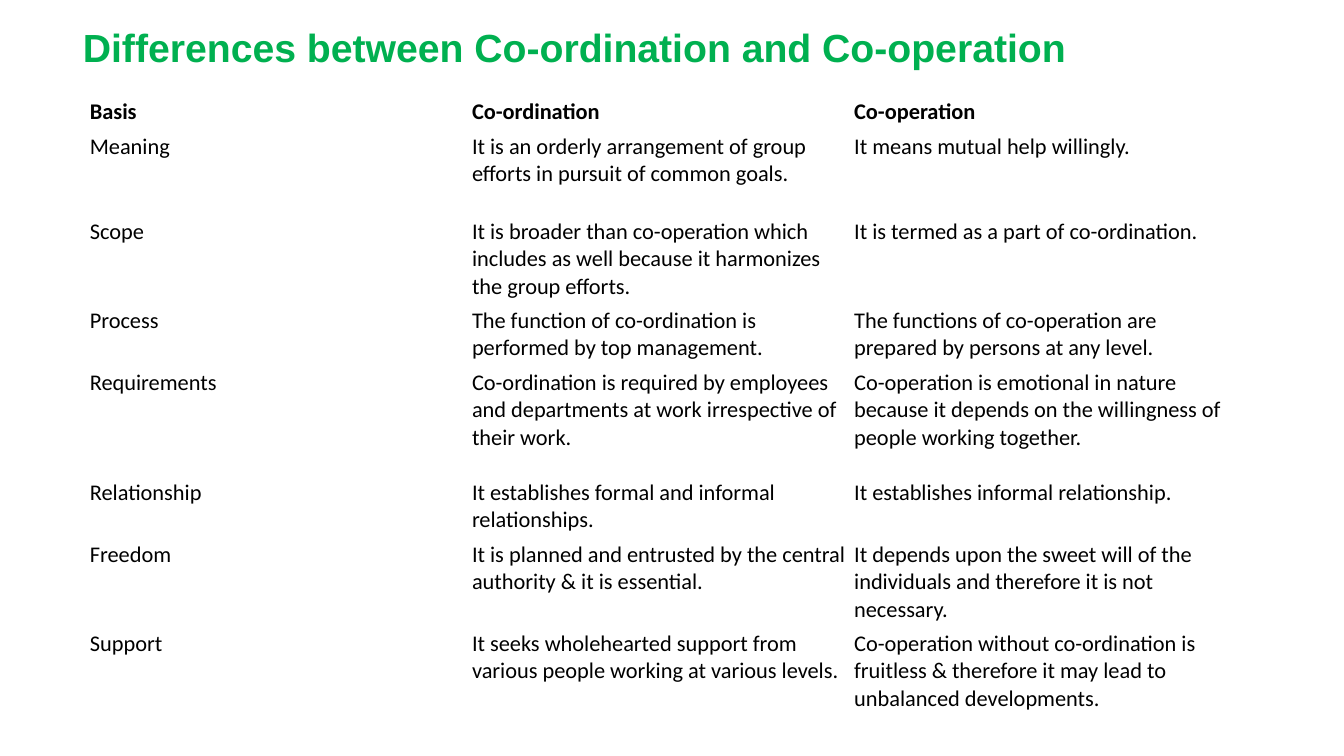
import pptx
import pptx.dml.color
import pptx.enum.text
import pptx.util

Pt = pptx.util.Pt

COMPARISON = [
    ("Basis", "Co-ordination", "Co-operation"),
    ("Meaning",
     "It is an orderly arrangement of group efforts in pursuit of common goals.",
     "It means mutual help willingly."),
    ("Scope",
     "It is broader than co-operation which includes as well because it harmonizes the group efforts.",
     "It is termed as a part of co-ordination."),
    ("Process",
     "The function of co-ordination is performed by top management.",
     "The functions of co-operation are prepared by persons at any level."),
    ("Requirements",
     "Co-ordination is required by employees and departments at work irrespective of their work.",
     "Co-operation is emotional in nature because it depends on the willingness of people working together."),
    ("Relationship",
     "It establishes formal and informal relationships.",
     "It establishes informal relationship."),
    ("Freedom",
     "It is planned and entrusted by the central authority & it is essential.",
     "It depends upon the sweet will of the individuals and therefore it is not necessary."),
    ("Support",
     "It seeks wholehearted support from various people working at various levels.",
     "Co-operation without co-ordination is fruitless & therefore it may lead to unbalanced developments."),
]
ROW_HEIGHTS = [24, 60.5, 60.5, 42, 78.5, 42, 60.5, 60.5]
COLUMN_WIDTH = 273
CELL_MARGIN = 3


def set_font(paragraph, name, size, color, bold):
    font = paragraph.font
    font.name, font.size, font.bold = name, Pt(size), bold
    font.color.rgb = pptx.dml.color.RGBColor.from_string(color)


def add_heading(slide, wording):
    heading = slide.shapes.title
    heading.left, heading.top = Pt(52), Pt(13)
    heading.width, heading.height = Pt(893), Pt(41)
    frame = heading.text_frame
    frame.text = wording
    frame.word_wrap = True
    frame.auto_size = pptx.enum.text.MSO_AUTO_SIZE.SHAPE_TO_FIT_TEXT
    frame.vertical_anchor = pptx.enum.text.MSO_ANCHOR.MIDDLE
    paragraph = frame.paragraphs[0]
    paragraph.alignment = pptx.enum.text.PP_ALIGN.LEFT
    set_font(paragraph, "Arial", 28, "00B050", True)


def fill_cell(cell, wording, bold):
    cell.fill.background()
    cell.margin_left = cell.margin_right = Pt(CELL_MARGIN)
    cell.margin_top = cell.margin_bottom = Pt(CELL_MARGIN)
    cell.text = wording
    set_font(cell.text_frame.paragraphs[0], "Calibri", 16, "000000", bold)


def add_comparison(slide, rows):
    columns = len(rows[0])
    table = slide.shapes.add_table(
        len(rows), columns, Pt(61.2), Pt(67),
        Pt(columns * COLUMN_WIDTH), Pt(sum(ROW_HEIGHTS))).table
    table.first_row = True
    table.horz_banding = False
    for column in table.columns:
        column.width = Pt(COLUMN_WIDTH)
    for r, (row, height) in enumerate(zip(rows, ROW_HEIGHTS)):
        table.rows[r].height = Pt(height)
        for c, wording in enumerate(row):
            fill_cell(table.cell(r, c), wording, bold=r == 0)


def main():
    deck = pptx.Presentation()
    deck.slide_width, deck.slide_height = Pt(960), Pt(540)
    slide = deck.slides.add_slide(deck.slide_layouts[5])

    # Heading
    add_heading(slide, "Differences between Co-ordination and Co-operation")

    # Comparison table
    add_comparison(slide, COMPARISON)

    deck.save("out.pptx")


if __name__ == "__main__":
    main()
